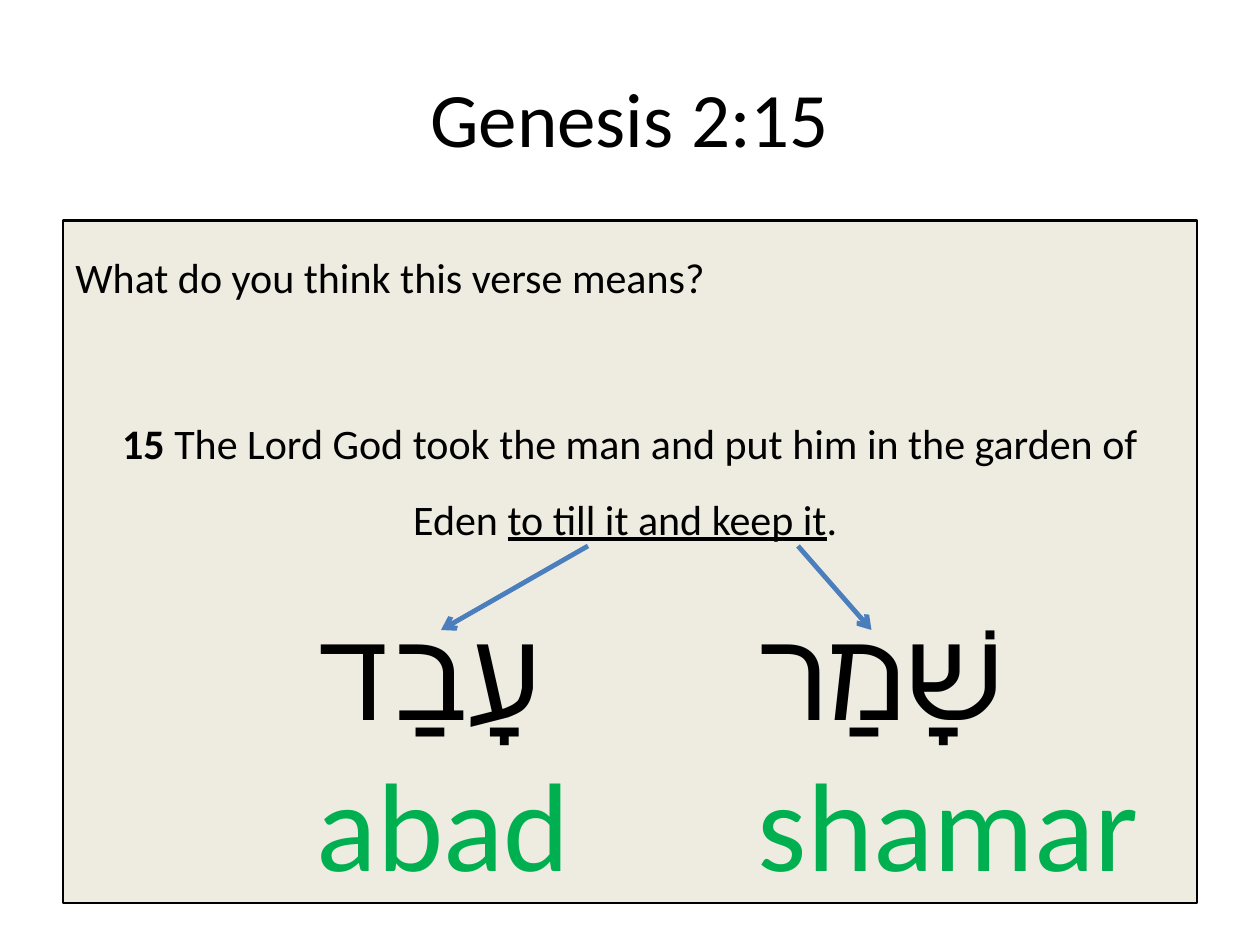
from dataclasses import dataclass
from pptx import Presentation
from pptx.dml.color import RGBColor as Color
from pptx.enum.shapes import MSO_CONNECTOR as Connector, MSO_SHAPE as Shape
from pptx.enum.text import MSO_ANCHOR as Anchor, PP_ALIGN as Align
from pptx.oxml.ns import qn
from pptx.util import Pt
from lxml import etree


@dataclass(frozen=True)
class Theme:
    font: str = "Calibri"
    ink: Color = Color.from_string("000000")
    panel: Color = Color.from_string("EEECE1")
    arrow: Color = Color.from_string("4B7EBC")
    green: Color = Color.from_string("00B050")
    title: int = 44
    body: int = 24
    word: int = 72


theme = Theme()


def add_span(para, text, size, color=theme.ink):
    span = para.add_run()
    span.text = text
    span.font.name = theme.font
    span.font.size = Pt(size)
    span.font.color.rgb = color
    return span


deck = Presentation()
deck.slide_width, deck.slide_height = Pt(720), Pt(540)
page = deck.slides.add_slide(deck.slide_layouts[6])

title = page.shapes.add_textbox(Pt(36), Pt(21.6), Pt(648), Pt(90)).text_frame
title.word_wrap = True
title.vertical_anchor = Anchor.MIDDLE
title.paragraphs[0].alignment = Align.CENTER
add_span(title.paragraphs[0], "Genesis 2:15", theme.title)

panel = page.shapes.add_shape(Shape.RECTANGLE, Pt(36), Pt(126), Pt(648), Pt(390))
panel.shadow.inherit = False
panel.fill.solid()
panel.fill.fore_color.rgb = theme.panel
panel.line.color.rgb = theme.ink
panel.line.width = Pt(1.5)
body = panel.text_frame
body.word_wrap = True
body.vertical_anchor = Anchor.TOP

question = body.paragraphs[0]
question.alignment = Align.LEFT
question.line_spacing = 1.5
add_span(question, "What do you think this verse means?", theme.body)

verse = body.add_paragraph()
verse.alignment = Align.CENTER
verse.line_spacing = 1.5
verse.space_before = Pt(51.5)
add_span(verse, "15", theme.body).font.bold = True
add_span(verse, " The Lord God took the man and put him in the garden of Eden ", theme.body)
add_span(verse, "to till it and keep it", theme.body).font.underline = True
add_span(verse, ". ", theme.body)

words = [
    ("עָבַד", "abad", 174, 168, 336, 252),
    ("שָׁמַר", "shamar", 426, 240, 456, 498),
]
for hebrew, sound, left, width, start, end in words:
    box = page.shapes.add_textbox(Pt(left), Pt(336), Pt(width), Pt(181.5)).text_frame
    box.word_wrap = True
    add_span(box.paragraphs[0], hebrew, theme.word)
    add_span(box.add_paragraph(), sound, theme.word, theme.green)

    arrow = page.shapes.add_connector(Connector.STRAIGHT, Pt(start), Pt(312), Pt(end), Pt(360))
    arrow.line.color.rgb = theme.arrow
    arrow.line.width = Pt(2.75)
    etree.SubElement(arrow.line._get_or_add_ln(), qn("a:tailEnd"), type="arrow")
    etree.SubElement(arrow._element.spPr, qn("a:effectLst"))

deck.save("out.pptx")
